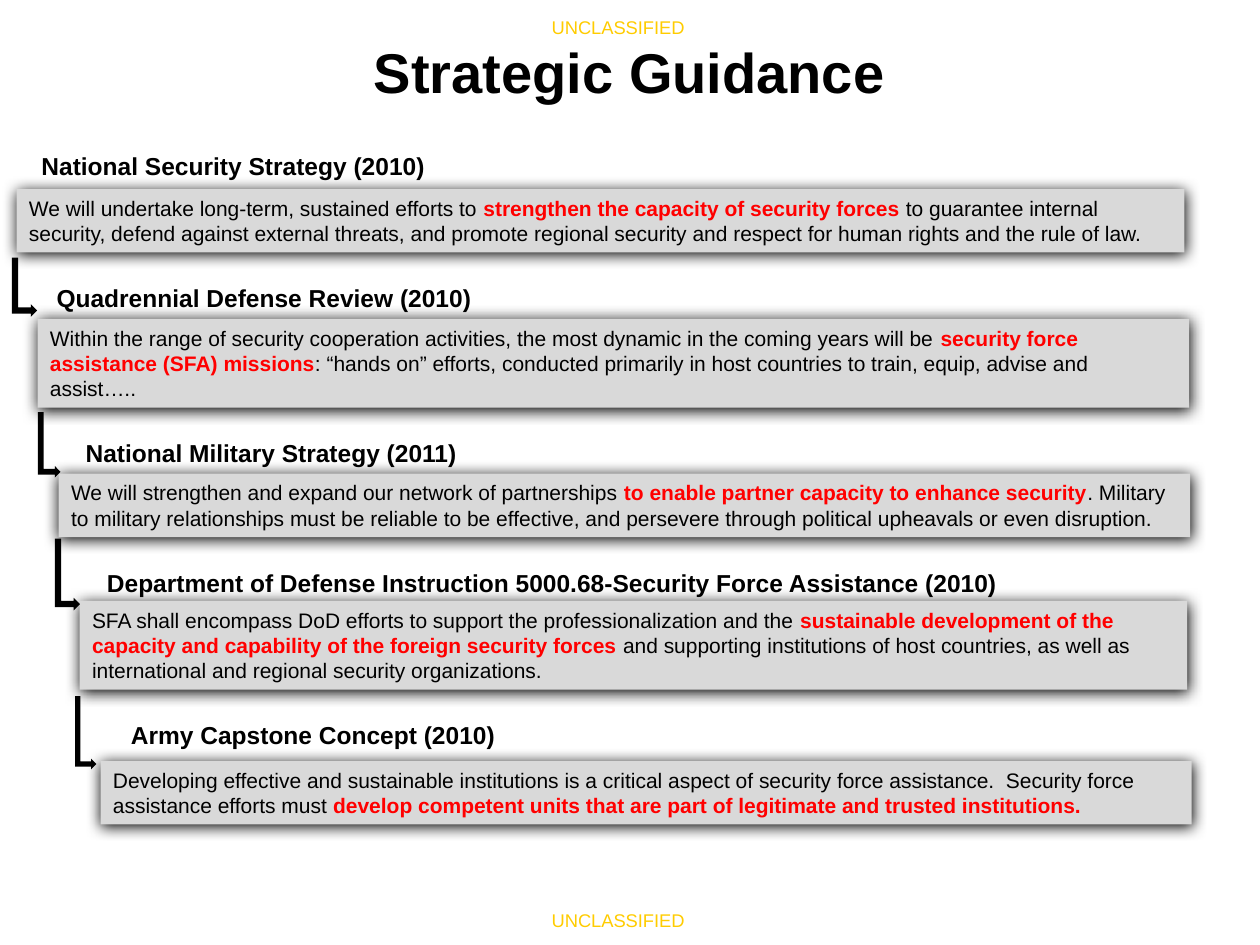
from dataclasses import dataclass
from lxml import etree
from pptx import Presentation
from pptx import util as u
from pptx.dml import color
from pptx.enum import shapes, text
from pptx.oxml import ns

Pt = u.Pt


@dataclass
class Theme:
    font: str = "Arial"
    ink: str = "000000"
    key: str = "FF0000"
    mark: str = "FFCC00"
    panel: str = "D9D9D9"
    title: float = 32
    head: float = 14
    body: float = 12
    small: float = 10.5


theme = Theme()


def add_run(para, words, size, tint, bold=False):
    run = para.add_run()
    run.text = words
    run.font.name = theme.font
    run.font.size = Pt(size)
    run.font.bold = bold
    run.font.color.rgb = color.RGBColor.from_string(tint)


def add_solid(kind, left, top, width, height, tint):
    shape = slide.shapes.add_shape(kind, Pt(left), Pt(top), Pt(width), Pt(height))
    shape.shadow.inherit = False
    shape.fill.solid()
    shape.fill.fore_color.rgb = color.RGBColor.from_string(tint)
    shape.line.fill.background()
    return shape


deck = Presentation()
deck.slide_width, deck.slide_height = Pt(720), Pt(540)
slide = deck.slides.add_slide(deck.slide_layouts[5])

# Title
title = slide.shapes.title
title.left, title.top, title.width, title.height = Pt(131.8), Pt(18), Pt(455.8), Pt(46)
frame = title.text_frame
frame.word_wrap = True
frame.auto_size = text.MSO_AUTO_SIZE.NONE
frame.vertical_anchor = text.MSO_ANCHOR.TOP
frame.paragraphs[0].alignment = text.PP_ALIGN.CENTER
add_run(frame.paragraphs[0], "Strategic Guidance", theme.title, theme.ink, True)

# Marking at top and bottom
for top in (5.8, 516.2):
    box = slide.shapes.add_textbox(Pt(308.2), Pt(top), Pt(91.4), Pt(20.2))
    box.text_frame.word_wrap = False
    add_run(box.text_frame.paragraphs[0], "UNCLASSIFIED", theme.small, theme.mark)

# Steps: heading, its left and top, panel top, width and lines, (words, is key)
steps = [
    ("National Security Strategy (2010)", 16.6, 82.8, 108, 667.4, 2, [
        ("We will undertake long-term, sustained efforts to ", False),
        ("strengthen the capacity of security forces ", True),
        ("to guarantee internal security, defend against external threats, and "
         "promote regional security and respect for human rights and the rule of law.", False)]),
    ("Quadrennial Defense Review (2010)", 25.2, 158.4, 182.2, 658.1, 3, [
        ("Within the range of security cooperation activities, the most dynamic "
         "in the coming years will be ", False),
        ("security force assistance (SFA) missions", True),
        (": “hands on” efforts, conducted primarily in host countries to train, "
         "equip, advise and assist…..", False)]),
    ("National Military Strategy (2011)", 41.8, 247, 270.7, 646.6, 2, [
        ("We will strengthen and expand our network of partnerships ", False),
        ("to enable partner capacity to enhance security", True),
        (". Military to military relationships must be reliable to be effective, "
         "and persevere through political upheavals or even disruption.", False)]),
    ("Department of Defense Instruction 5000.68-Security Force Assistance (2010)",
     54, 321.1, 343.4, 632.9, 3, [
        ("SFA shall encompass DoD efforts to support the professionalization and the ", False),
        ("sustainable development of the capacity and capability of the foreign "
         "security forces ", True),
        ("and supporting institutions of host countries, as well as international "
         "and regional security organizations.", False)]),
    ("Army Capstone Concept (2010)", 67.7, 408.2, 434.9, 623.5, 2, [
        ("Developing effective and sustainable institutions is a critical aspect of "
         "security force assistance.  Security force assistance efforts must ", False),
        ("develop competent units that are part of legitimate and trusted "
         "institutions.", True)]),
]
for i, (head, left, top, base, width, lines, parts) in enumerate(steps):
    box = slide.shapes.add_textbox(Pt(left), Pt(top), Pt(720 - left), Pt(24.2))
    box.text_frame.word_wrap = True
    add_run(box.text_frame.paragraphs[0], head, theme.head, theme.ink, True)

    panel = add_solid(shapes.MSO_SHAPE.RECTANGLE, 9.5 + 12 * i, base, width,
                      7.2 + 14.5 * lines, theme.panel)
    # Soft shadow just below the panel
    glow = panel._element.spPr.find(ns.qn("a:effectLst"))
    shade = etree.SubElement(glow, ns.qn("a:outerShdw"), blurRad=str(Pt(8.5)),
                             dist=str(Pt(1)), dir="5400000", algn="ctr", rotWithShape="0")
    etree.SubElement(shade, ns.qn("a:srgbClr"), val=theme.ink)

    frame = panel.text_frame
    frame.word_wrap = True
    frame.vertical_anchor = text.MSO_ANCHOR.TOP
    frame.paragraphs[0].alignment = text.PP_ALIGN.LEFT
    for words, key in parts:
        add_run(frame.paragraphs[0], words, theme.body, theme.key if key else theme.ink, key)

# Bent arrows from each step to the next: left, top, length, depth before turning
for left, top, length, depth in ((-2.9, 157, 33.8, 14.4), (9.4, 247.7, 37.4, 13),
                                 (18, 321.1, 41, 14.4), (28.1, 412.6, 41.8, 12.2)):
    arrow = add_solid(shapes.MSO_SHAPE.BENT_UP_ARROW, left, top, length, depth, theme.ink)
    arrow.rotation = 90

deck.save("out.pptx")
